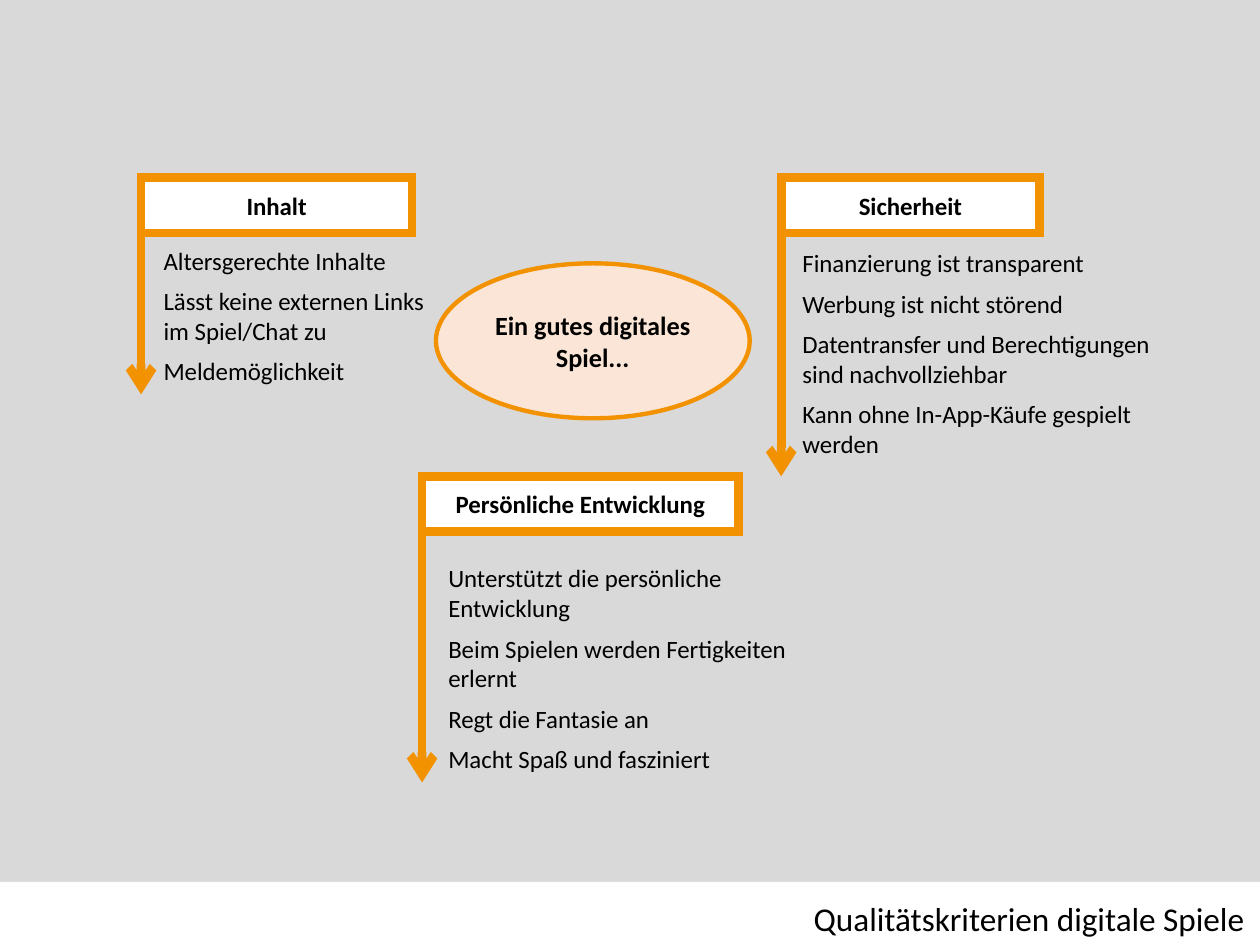
import pptx
import pptx.util
import pptx.dml.color
import pptx.enum.shapes
import pptx.enum.text
import pptx.oxml.ns
import lxml.etree

Inches = pptx.util.Inches
Pt = pptx.util.Pt
Kind = pptx.enum.shapes.MSO_SHAPE
Align = pptx.enum.text.PP_ALIGN
Anchor = pptx.enum.text.MSO_ANCHOR
qn = pptx.oxml.ns.qn

COLORS = {"back": "D9D9D9", "white": "FFFFFF", "peach": "FBE5D6",
          "orange": "F39200", "black": "000000"}


def color(name):
    return pptx.dml.color.RGBColor.from_string(COLORS[name])


def write(frame, *lines, size=14.2, bold=False, align=Align.LEFT,
          anchor=Anchor.TOP, wrap=True, after=0):
    frame.word_wrap = wrap
    frame.vertical_anchor = anchor
    for i, line in enumerate(lines):
        para = frame.paragraphs[0] if i == 0 else frame.add_paragraph()
        para.alignment = align
        para.space_after = Pt(after)
        run = para.add_run()
        run.text = line
        run.font.name = "Calibri"
        run.font.size = Pt(size)
        run.font.bold = bold
        run.font.color.rgb = color("black")


class Board:
    thick = 5

    def __init__(self, slide):
        self.slide = slide
        fill = slide.background.fill
        fill.solid()
        fill.fore_color.rgb = color("back")

    def shape(self, kind, box, fill, width=0):
        item = self.slide.shapes.add_shape(kind, *map(Inches, box))
        item.shadow.inherit = False
        item.fill.solid()
        item.fill.fore_color.rgb = color(fill)
        if width:
            item.line.color.rgb = color("orange")
            item.line.width = Pt(width)
            lxml.etree.SubElement(item.line._get_or_add_ln(), qn("a:miter"), lim="800000")
        else:
            item.line.fill.background()
        return item

    def label(self, kind, box, text, fill="white", width=thick, size=14.2):
        item = self.shape(kind, box, fill, width)
        write(item.text_frame, text, size=size, bold=True,
              align=Align.CENTER, anchor=Anchor.MIDDLE)

    def text(self, box, *lines, **style):
        item = self.slide.shapes.add_textbox(*map(Inches, box))
        write(item.text_frame, *lines, **style)

    def arrow(self, x, top, end):
        line = self.slide.shapes.add_connector(
            pptx.enum.shapes.MSO_CONNECTOR.STRAIGHT,
            Inches(x), Inches(top), Inches(x), Inches(end))
        line.line.color.rgb = color("orange")
        line.line.width = Pt(self.thick)
        lxml.etree.SubElement(line.line._get_or_add_ln(), qn("a:tailEnd"), type="arrow")
        lxml.etree.SubElement(line._element.spPr, qn("a:effectLst"))

    def topic(self, name, x, top, width, end, box, lines):
        self.label(Kind.RECTANGLE, (x, top, width, 0.44), name)
        self.text(box, *lines, after=6)
        self.arrow(x, top, end)


TOPICS = [
    ("Persönliche Entwicklung", 3.35, 3.78, 2.51, 6.21, (3.46, 4.42, 3.1, 1.79),
     ["Unterstützt die persönliche Entwicklung",
      "Beim Spielen werden Fertigkeiten erlernt",
      "Regt die Fantasie an",
      "Macht Spaß und fasziniert"]),
    ("Sicherheit", 6.2, 1.41, 2.05, 3.78, (6.27, 1.92, 3.21, 1.79),
     ["Finanzierung ist transparent",
      "Werbung ist nicht störend",
      "Datentransfer und Berechtigungen sind nachvollziehbar",
      "Kann ohne In-App-Käufe gespielt werden"]),
    ("Inhalt", 1.12, 1.41, 2.15, 3.13, (1.2, 1.9, 2.27, 1.23),
     ["Altersgerechte Inhalte",
      "Lässt keine externen Links im Spiel/Chat zu",
      "Meldemöglichkeit"]),
]


def main():
    deck = pptx.Presentation()
    deck.slide_width = Inches(10)
    deck.slide_height = Inches(7.5)
    board = Board(deck.slides.add_slide(deck.slide_layouts[6]))
    board.shape(Kind.RECTANGLE, (0, 7, 10, 0.5), "white")
    board.label(Kind.OVAL, (3.46, 2.09, 2.49, 1.23), "Ein gutes digitales Spiel...",
                fill="peach", width=2.5, size=15)
    board.text((6.36, 7.08, 3.64, 0.42), "Qualitätskriterien digitale Spiele",
               size=19, wrap=False)
    for topic in TOPICS:
        board.topic(*topic)
    deck.save("out.pptx")


if __name__ == "__main__":
    main()
